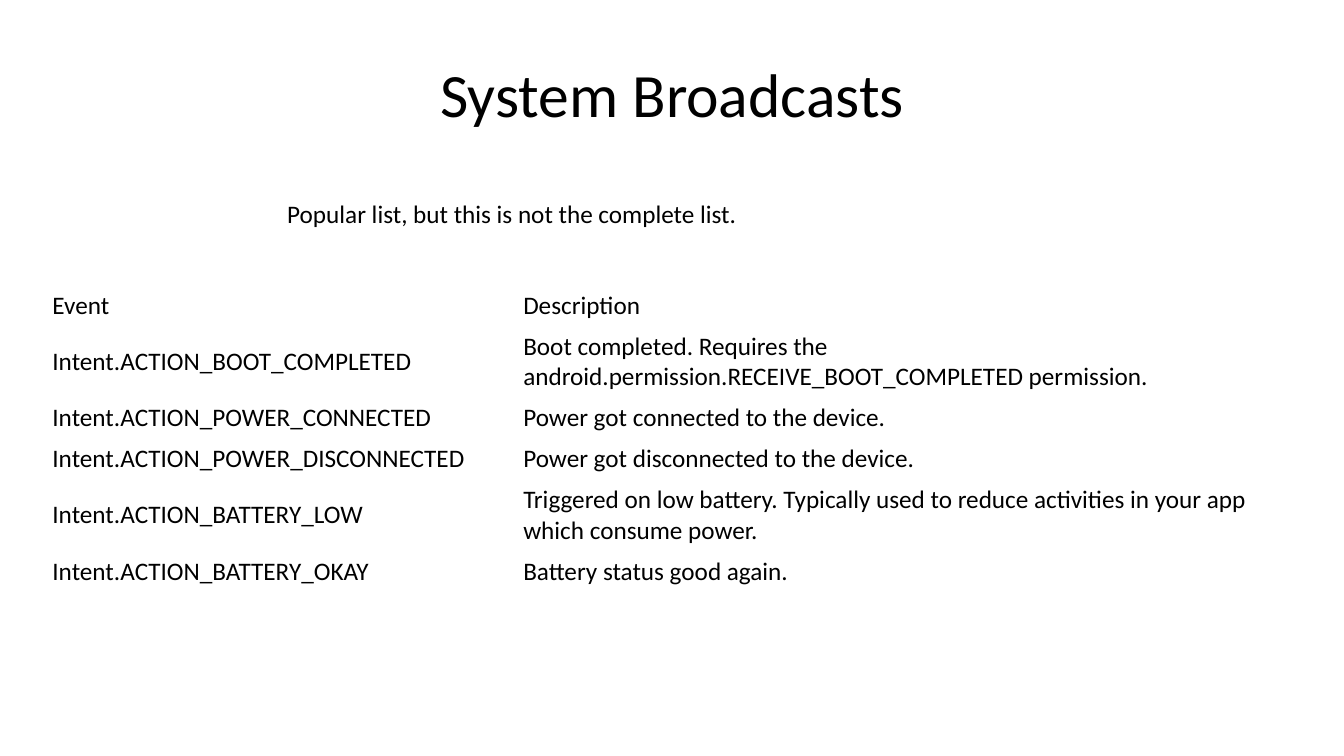
from pptx import Presentation
from pptx.dml.color import RGBColor
from pptx.enum.text import MSO_ANCHOR, MSO_AUTO_SIZE, PP_ALIGN
from pptx.util import Inches, Pt

TITLE = "System Broadcasts"
NOTE = "Popular list, but this is not the complete list."
BROADCASTS = [
    ("Event", "Description"),
    ("Intent.ACTION_BOOT_COMPLETED",
     "Boot completed. Requires the android.permission.RECEIVE_BOOT_COMPLETED permission."),
    ("Intent.ACTION_POWER_CONNECTED", "Power got connected to the device."),
    ("Intent.ACTION_POWER_DISCONNECTED", "Power got disconnected to the device."),
    ("Intent.ACTION_BATTERY_LOW",
     "Triggered on low battery. Typically used to reduce activities in your app which consume power."),
    ("Intent.ACTION_BATTERY_OKAY", "Battery status good again."),
]
COLUMN_WIDTHS = (4.67, 7.83)
LINES_PER_ROW = (1, 2, 1, 1, 2, 1)
LINE_HEIGHT = 0.3
ROW_PADDING = 0.1
BLACK = RGBColor(0, 0, 0)


def write(text_frame, text, size, alignment=PP_ALIGN.LEFT):
    text_frame.text = text
    paragraph = text_frame.paragraphs[0]
    paragraph.alignment = alignment
    paragraph.font.name = "Calibri"
    paragraph.font.size = Pt(size)
    paragraph.font.bold = False
    paragraph.font.color.rgb = BLACK


def add_title(slide):
    title = slide.shapes.title
    title.left, title.top = Inches(0.67), Inches(0.3)
    title.width, title.height = Inches(12), Inches(1.25)
    title.text_frame.vertical_anchor = MSO_ANCHOR.MIDDLE
    write(title.text_frame, TITLE, 44, PP_ALIGN.CENTER)


def add_broadcast_table(slide):
    row_heights = [lines * LINE_HEIGHT + ROW_PADDING for lines in LINES_PER_ROW]
    table = slide.shapes.add_table(
        len(BROADCASTS), len(COLUMN_WIDTHS), Inches(0.42), Inches(2.83),
        Inches(sum(COLUMN_WIDTHS)), Inches(sum(row_heights))).table
    table.first_row = False
    table.horz_banding = False
    for column, width in zip(table.columns, COLUMN_WIDTHS):
        column.width = Inches(width)
    for row, height, texts in zip(table.rows, row_heights, BROADCASTS):
        row.height = Inches(height)
        for cell, text in zip(row.cells, texts):
            cell.fill.background()
            cell.vertical_anchor = MSO_ANCHOR.MIDDLE
            write(cell.text_frame, text, 18)


def add_note(slide):
    note = slide.shapes.add_textbox(Inches(2.75), Inches(1.92), Inches(4.71), Inches(0.4))
    note.text_frame.word_wrap = False
    note.text_frame.auto_size = MSO_AUTO_SIZE.SHAPE_TO_FIT_TEXT
    write(note.text_frame, NOTE, 18)


def main():
    presentation = Presentation()
    presentation.slide_width = Inches(13.33)
    presentation.slide_height = Inches(7.5)
    slide = presentation.slides.add_slide(presentation.slide_layouts[5])
    add_title(slide)
    add_broadcast_table(slide)
    add_note(slide)
    presentation.save("out.pptx")


if __name__ == "__main__":
    main()
